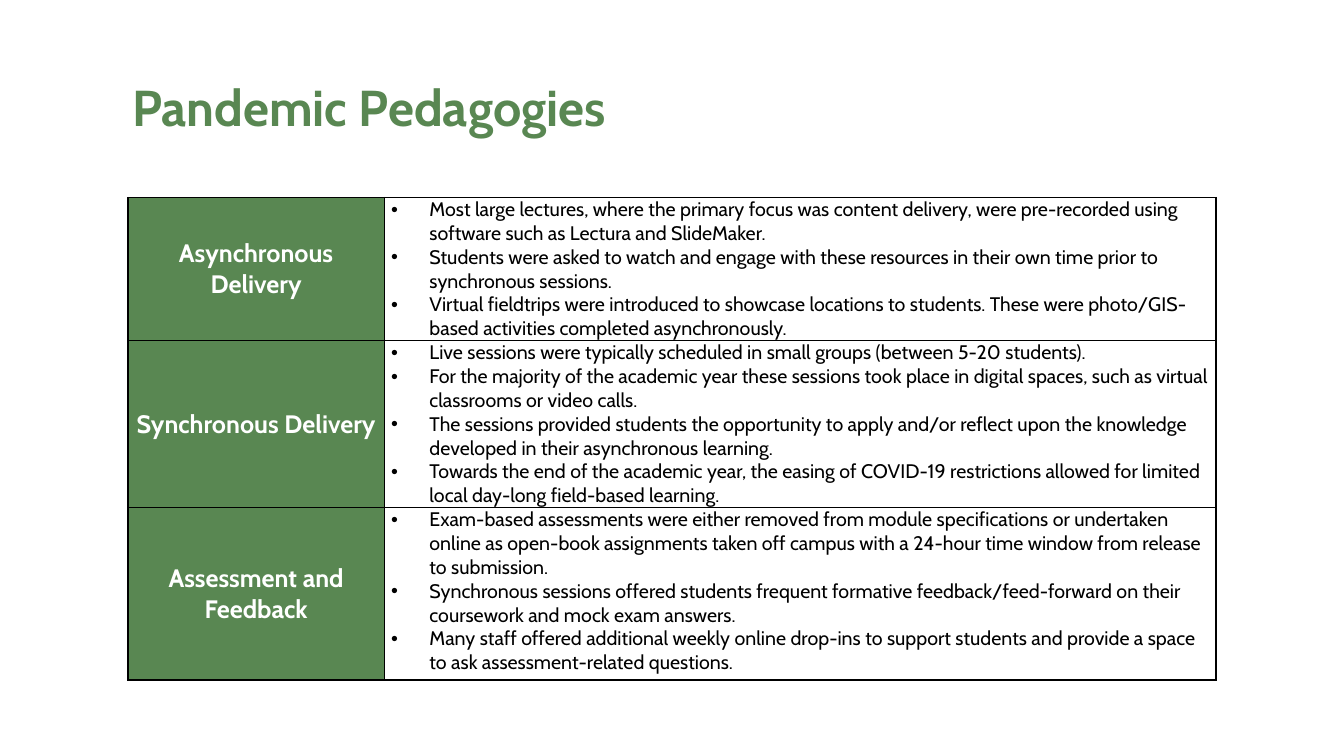
from lxml import etree
from pptx import Presentation
from pptx import util as u
from pptx.dml.color import RGBColor
from pptx.enum import text
from pptx.oxml import ns

GREEN = RGBColor(0x59, 0x87, 0x52)
BLACK = RGBColor(0, 0, 0)
WHITE = RGBColor(255, 255, 255)

PEDAGOGIES = {
    "Asynchronous Delivery": [
        "Most large lectures, where the primary focus was content delivery, were pre-recorded using "
        "software such as Lectura and SlideMaker.",
        "Students were asked to watch and engage with these resources in their own time prior to "
        "synchronous sessions.",
        "Virtual fieldtrips were introduced to showcase locations to students. These were photo/GIS-based "
        "activities completed asynchronously.",
    ],
    "Synchronous Delivery": [
        "Live sessions were typically scheduled in small groups (between 5-20 students).",
        "For the majority of the academic year these sessions took place in digital spaces, such as "
        "virtual classrooms or video calls.",
        "The sessions provided students the opportunity to apply and/or reflect upon the knowledge "
        "developed in their asynchronous learning.",
        "Towards the end of the academic year, the easing of COVID-19 restrictions allowed for limited "
        "local day-long field-based learning.",
    ],
    "Assessment and Feedback": [
        "Exam-based assessments were either removed from module specifications or undertaken online as "
        "open-book assignments taken off campus with a 24-hour time window from release to submission.",
        "Synchronous sessions offered students frequent formative feedback/feed-forward on their "
        "coursework and mock exam answers.",
        "Many staff offered additional weekly online drop-ins to support students and provide a space "
        "to ask assessment-related questions.",
    ],
}


def apply(target, formats):
    for name, value in formats.items():
        setattr(target, name, value)


class SlideBuilder:
    """Holds the text styles and the slide being built."""

    font = "Cabin"
    title_style = {"size": u.Pt(36), "bold": True}
    heading_style = {"size": u.Pt(18), "bold": True}
    bullet_style = {"size": u.Pt(14), "bold": False}
    flush = {"margin_left": 0, "margin_top": 0, "margin_right": 0, "margin_bottom": 0}
    cell_margins = flush | {"margin_left": u.Inches(0.07), "margin_right": u.Inches(0.07)}

    def __init__(self, prs):
        self.s = prs.slides.add_slide(prs.slide_layouts[5])

    def add_words(self, p, words, style, color):
        r = p.add_run()
        r.text = words
        apply(r.font, style | {"name": self.font})
        r.font.color.rgb = color

    def title(self, words, left, top, width, height):
        sp = self.s.shapes.title
        apply(sp, {"left": u.Inches(left), "top": u.Inches(top),
                   "width": u.Inches(width), "height": u.Inches(height)})
        tf = sp.text_frame
        apply(tf, self.flush | {"word_wrap": True, "vertical_anchor": text.MSO_ANCHOR.TOP,
                                "auto_size": text.MSO_AUTO_SIZE.NONE})
        p = tf.paragraphs[0]
        p.alignment = text.PP_ALIGN.LEFT
        self.add_words(p, words, self.title_style, GREEN)

    def borders(self, cell):
        props = cell._tc.get_or_add_tcPr()
        for side in ("a:lnL", "a:lnR", "a:lnT", "a:lnB"):
            line = etree.SubElement(props, ns.qn(side), w=str(u.Pt(1)))
            fill = etree.SubElement(line, ns.qn("a:solidFill"))
            etree.SubElement(fill, ns.qn("a:srgbClr"), val=str(BLACK))

    def bullet(self, p):
        """Give the paragraph a round bullet with a hanging indent."""
        props = p._p.get_or_add_pPr()
        indent = u.Inches(0.38)
        props.set("marL", str(indent))
        props.set("indent", str(-indent))
        etree.SubElement(props, ns.qn("a:buFont"), typeface="Arial")
        etree.SubElement(props, ns.qn("a:buChar"), char="•")

    def heading_cell(self, cell, words):
        cell.vertical_anchor = text.MSO_ANCHOR.MIDDLE
        cell.fill.solid()
        cell.fill.fore_color.rgb = GREEN
        p = cell.text_frame.paragraphs[0]
        p.alignment = text.PP_ALIGN.CENTER
        self.add_words(p, words, self.heading_style, WHITE)

    def bullet_cell(self, cell, items):
        cell.fill.background()
        tf = cell.text_frame
        for i, item in enumerate(items):
            p = tf.add_paragraph() if i else tf.paragraphs[0]
            self.bullet(p)
            self.add_words(p, item, self.bullet_style, BLACK)

    def table(self, content, left, top, widths, heights):
        frame = self.s.shapes.add_table(len(heights), len(widths), u.Inches(left), u.Inches(top),
                                        u.Inches(sum(widths)), u.Inches(sum(heights)))
        table = frame.table
        apply(table, {"first_row": False, "horz_banding": False})
        for column, width in zip(table.columns, widths):
            column.width = u.Inches(width)
        for row, height, (heading, items) in zip(table.rows, heights, content.items()):
            row.height = u.Inches(height)
            for cell in row.cells:
                apply(cell, self.cell_margins)
                self.borders(cell)
            self.heading_cell(row.cells[0], heading)
            self.bullet_cell(row.cells[1], items)


def main():
    prs = Presentation()
    apply(prs, {"slide_width": u.Inches(13.33), "slide_height": u.Inches(7.5)})
    builder = SlideBuilder(prs)
    builder.title("Pandemic Pedagogies", 1.31, 0.75, 10.87, 1.11)
    builder.table(PEDAGOGIES, 1.27, 1.96, widths=[2.54, 8.25], heights=[1.42, 1.65, 1.71])
    prs.save("out.pptx")


if __name__ == "__main__":
    main()
